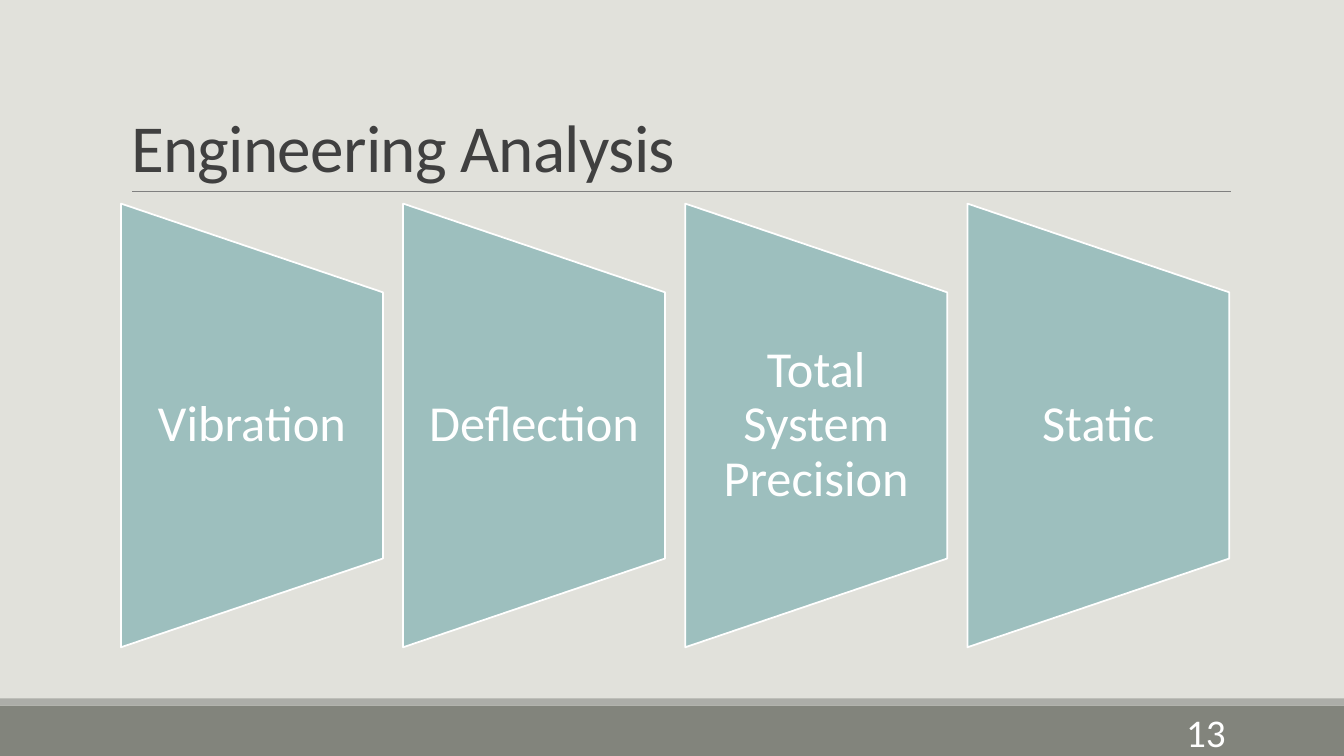
from lxml.etree import SubElement
from pptx import Presentation
from pptx.dml.color import RGBColor
from pptx.enum.shapes import MSO_CONNECTOR, MSO_SHAPE
from pptx.enum.text import MSO_ANCHOR, MSO_AUTO_SIZE, PP_ALIGN
from pptx.oxml.ns import qn
from pptx.util import Cm, Pt

BACKGROUND = RGBColor(0xE1, 0xE1, 0xDB)
FOOTER = RGBColor(0x82, 0x84, 0x7C)
FOOTER_EDGE = RGBColor(0xAC, 0xAD, 0xA8)
RULE = RGBColor(0x80, 0x80, 0x80)
TITLE = RGBColor(0x40, 0x40, 0x40)
PANEL = RGBColor(0x9D, 0xBF, 0xBE)
WHITE = RGBColor(0xFF, 0xFF, 0xFF)

FONT = "Calibri"
PAGE_WIDTH = 33.87
PAGE_HEIGHT = 19.05
ANALYSES = ["Vibration", "Deflection", "Total System Precision", "Static"]
PANEL_LEFT = 3.05
PANEL_STEP = 7.11
PANEL_WIDTH = 6.6
PANEL_HEIGHT = 11.18
PANEL_MIDDLE = 10.72
LABEL_HEIGHT = 6.7


def format_text(box, text, size, color, align, anchor, line_spacing=1.0):
    frame = box.text_frame
    frame.text = text
    frame.word_wrap = True
    frame.auto_size = MSO_AUTO_SIZE.NONE
    frame.vertical_anchor = anchor
    para = frame.paragraphs[0]
    para.alignment = align
    para.line_spacing = line_spacing
    span = para.runs[0]
    span.font.name = FONT
    span.font.size = Pt(size)
    span.font.color.rgb = color
    return span


def add_band(page, top, height, color):
    band = page.shapes.add_shape(
        MSO_SHAPE.RECTANGLE, 0, Cm(top), Cm(PAGE_WIDTH), Cm(height))
    band.shadow.inherit = False
    band.fill.solid()
    band.fill.fore_color.rgb = color
    band.line.fill.background()


def add_rule(page, left, right, top):
    rule = page.shapes.add_connector(
        MSO_CONNECTOR.STRAIGHT, Cm(left), Cm(top), Cm(right), Cm(top))
    rule.line.color.rgb = RULE
    rule.line.width = Pt(0.5)
    SubElement(rule.element.spPr, qn("a:effectLst"))


def set_title(page, text):
    title = page.shapes.title
    title.left, title.top = Cm(3.05), Cm(0.79)
    title.width, title.height = Cm(27.94), Cm(4.04)
    span = format_text(title, text, 48, TITLE, PP_ALIGN.LEFT, MSO_ANCHOR.BOTTOM, 0.85)
    span.font._element.set("spc", "-50")


def add_panel(group, left, text):
    panel = group.shapes.add_shape(
        MSO_SHAPE.FLOWCHART_MANUAL_OPERATION,
        Cm(left + (PANEL_WIDTH - PANEL_HEIGHT) / 2), Cm(PANEL_MIDDLE - PANEL_WIDTH / 2),
        Cm(PANEL_HEIGHT), Cm(PANEL_WIDTH))
    panel.rotation = 270
    panel.shadow.inherit = False
    panel.fill.solid()
    panel.fill.fore_color.rgb = PANEL
    panel.line.color.rgb = WHITE
    panel.line.width = Pt(1.25)

    label = group.shapes.add_textbox(
        Cm(left), Cm(PANEL_MIDDLE - LABEL_HEIGHT / 2), Cm(PANEL_WIDTH), Cm(LABEL_HEIGHT))
    format_text(label, text, 36, WHITE, PP_ALIGN.CENTER, MSO_ANCHOR.MIDDLE, 0.9)
    frame = label.text_frame
    frame.margin_left = frame.margin_right = Cm(0.63)
    frame.margin_top = frame.margin_bottom = 0


def add_page_number(page, number):
    box = page.shapes.add_textbox(Cm(27.51), Cm(17.93), Cm(3.63), Cm(1.02))
    format_text(box, number, 28, WHITE, PP_ALIGN.RIGHT, MSO_ANCHOR.MIDDLE)


def main():
    deck = Presentation()
    deck.slide_width = Cm(PAGE_WIDTH)
    deck.slide_height = Cm(PAGE_HEIGHT)
    page = deck.slides.add_slide(deck.slide_layouts.get_by_name("Title Only"))
    page.background.fill.solid()
    page.background.fill.fore_color.rgb = BACKGROUND

    add_band(page, 17.78, 1.27, FOOTER)
    add_band(page, 17.6, 0.18, FOOTER_EDGE)
    add_rule(page, 3.33, 31.01, 4.83)
    set_title(page, "Engineering Analysis")
    group = page.shapes.add_group_shape()
    for index, analysis in enumerate(ANALYSES):
        add_panel(group, PANEL_LEFT + index * PANEL_STEP, analysis)
    add_page_number(page, "13")
    deck.save("out.pptx")


if __name__ == "__main__":
    main()
